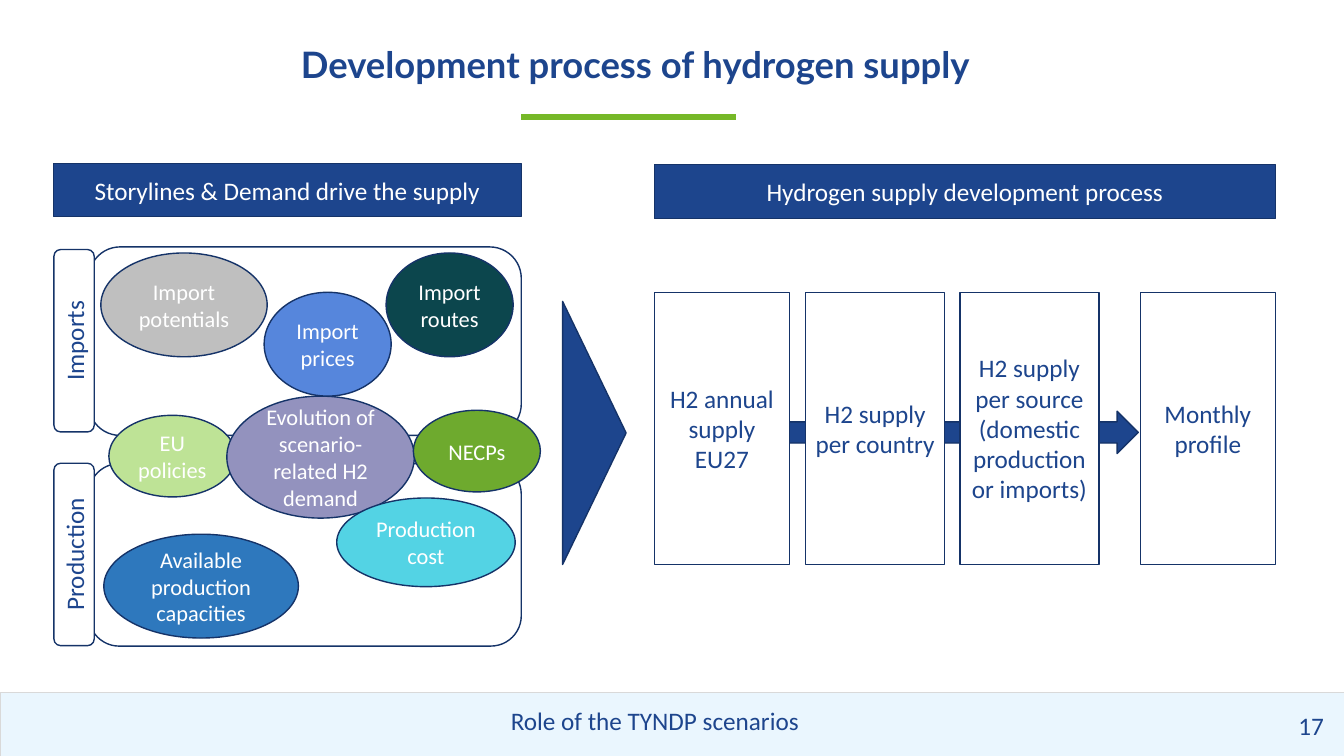
from dataclasses import dataclass

import pptx
import pptx.dml.color
import pptx.enum.shapes
import pptx.enum.text
import pptx.oxml.ns
import pptx.util
from lxml import etree

Inches = pptx.util.Inches
Pt = pptx.util.Pt
Preset = pptx.enum.shapes.MSO_SHAPE
Align = pptx.enum.text.PP_ALIGN
Anchor = pptx.enum.text.MSO_ANCHOR

NAVY = "1D458D"
OUTLINE = "153368"
WHITE = "FFFFFF"
GREEN = "76B828"


@dataclass
class Block:
    preset: int
    left: float
    top: float
    width: float
    height: float
    fill: str = WHITE
    text: str = ""
    size: int = 18
    color: str = NAVY
    rotation: int = 0
    line: str = OUTLINE
    weight: float = 1


def paint(target, color: str) -> None:
    target.rgb = pptx.dml.color.RGBColor.from_string(color)


def write(frame, text: str, *, size: float = 18, color: str = NAVY, font: str = "Calibri",
          bold: bool = False, align=Align.CENTER, anchor=Anchor.TOP,
          inset: float = 0.1, spacing: float = 1.0) -> None:
    frame.word_wrap = True
    frame.vertical_anchor = anchor
    frame.margin_left = frame.margin_right = Inches(inset)
    paragraph = frame.paragraphs[0]
    paragraph.alignment = align
    paragraph.line_spacing = spacing
    run = paragraph.add_run()
    run.text = text
    run.font.size = Pt(size)
    run.font.name = font
    run.font.bold = bold
    paint(run.font.color, color)


def draw_block(slide, block: Block) -> None:
    shape = slide.shapes.add_shape(block.preset, Inches(block.left), Inches(block.top),
                                   Inches(block.width), Inches(block.height))
    shape.shadow.inherit = False
    shape.rotation = block.rotation
    shape.fill.solid()
    paint(shape.fill.fore_color, block.fill)
    shape.line.width = Pt(block.weight)
    paint(shape.line.color, block.line)
    if block.text:
        write(shape.text_frame, block.text, size=block.size, color=block.color,
              anchor=Anchor.MIDDLE, inset=0.08)


def draw_text(slide, left: float, top: float, width: float, height: float,
              text: str, **style) -> None:
    box = slide.shapes.add_textbox(Inches(left), Inches(top), Inches(width), Inches(height))
    write(box.text_frame, text, **style)


def draw_rule(slide, left: float, right: float, y: float, color: str, weight: float) -> None:
    rule = slide.shapes.add_connector(pptx.enum.shapes.MSO_CONNECTOR.STRAIGHT,
                                      Inches(left), Inches(y), Inches(right), Inches(y))
    paint(rule.line.color, color)
    rule.line.width = Pt(weight)
    etree.SubElement(rule._element.spPr, pptx.oxml.ns.qn("a:effectLst"))


def header(left: float, top: float, width: float, height: float, text: str) -> Block:
    return Block(Preset.RECTANGLE, left, top, width, height, NAVY, text, color=WHITE)


def factor(left: float, top: float, width: float, height: float, fill: str, text: str) -> Block:
    return Block(Preset.OVAL, left, top, width, height, fill, text, size=16, color=WHITE)


def step(left: float, width: float, text: str) -> Block:
    return Block(Preset.RECTANGLE, left, 2.9, width, 2.7, text=text)


def tab(top: float, text: str) -> Block:
    return Block(Preset.ROUNDED_RECTANGLE, -0.17, top, 1.81, 0.4, text=text, rotation=270)


FOOTER_BAND = Block(Preset.RECTANGLE, 0, 6.87, 13.33, 0.63, "EAF6FE", line="D9D9D9", weight=0.25)

HEADERS = [
    header(0.53, 1.62, 4.64, 0.53, "Storylines & Demand drive the supply"),
    header(6.49, 1.63, 6.16, 0.54, "Hydrogen supply development process"),
]

PANELS = [
    Block(Preset.ROUNDED_RECTANGLE, 0.88, 4.6, 4.29, 1.81),
    Block(Preset.ROUNDED_RECTANGLE, 0.88, 2.45, 4.29, 1.87),
]

FACTORS = [
    factor(1.08, 4.12, 1.26, 0.81, "BEE396", "EU policies"),
    factor(1, 2.51, 1.65, 1.03, "BFBFBF", "Import potentials"),
    factor(2.25, 3.93, 1.86, 1.21, "9392BE", "Evolution of scenario-related H2 demand"),
    factor(3.34, 4.94, 1.77, 0.88, "53D3E4", "Production cost"),
    factor(2.62, 2.9, 1.26, 1.03, "5686DC", "Import prices"),
    factor(1.03, 5.3, 1.93, 1.03, "2E78BD", "Available production capacities"),
    factor(4.1, 4.07, 1.26, 0.81, "6EAA2E", "NECPs"),
    factor(3.83, 2.51, 1.26, 1.03, "0C464D", "Import routes"),
]

TABS = [tab(3.18, "Imports"), tab(5.3, "Production")]

FLOW = [
    Block(Preset.ISOSCELES_TRIANGLE, 4.59, 3.98, 2.61, 0.63, NAVY, rotation=90),
    Block(Preset.RIGHT_ARROW, 6.75, 4.08, 4.54, 0.42, NAVY),
    step(6.49, 1.34, "H2 annual supply EU27"),
    step(7.99, 1.38, "H2 supply per country"),
    step(9.52, 1.38, "H2 supply per source (domestic production or imports)"),
    step(11.31, 1.34, "Monthly profile"),
]


def main() -> None:
    deck = pptx.Presentation()
    deck.slide_width = Inches(13.33)
    deck.slide_height = Inches(7.5)
    slide = deck.slides.add_slide(deck.slide_layouts[6])

    draw_block(slide, FOOTER_BAND)
    draw_rule(slide, 5.17, 7.3, 1.16, GREEN, 4.5)
    draw_text(slide, 0.92, 0.42, 10.77, 0.62, "Development process of hydrogen supply",
              size=26, font="Lato", bold=True, spacing=0.9)
    for block in HEADERS + PANELS + FACTORS + TABS + FLOW:
        draw_block(slide, block)
    draw_text(slide, 0.25, 6.95, 12.49, 0.4, "Role of the TYNDP scenarios")
    draw_text(slide, 12.78, 7, 0.51, 0.29, "17", align=Align.LEFT)

    deck.save("out.pptx")


if __name__ == "__main__":
    main()
